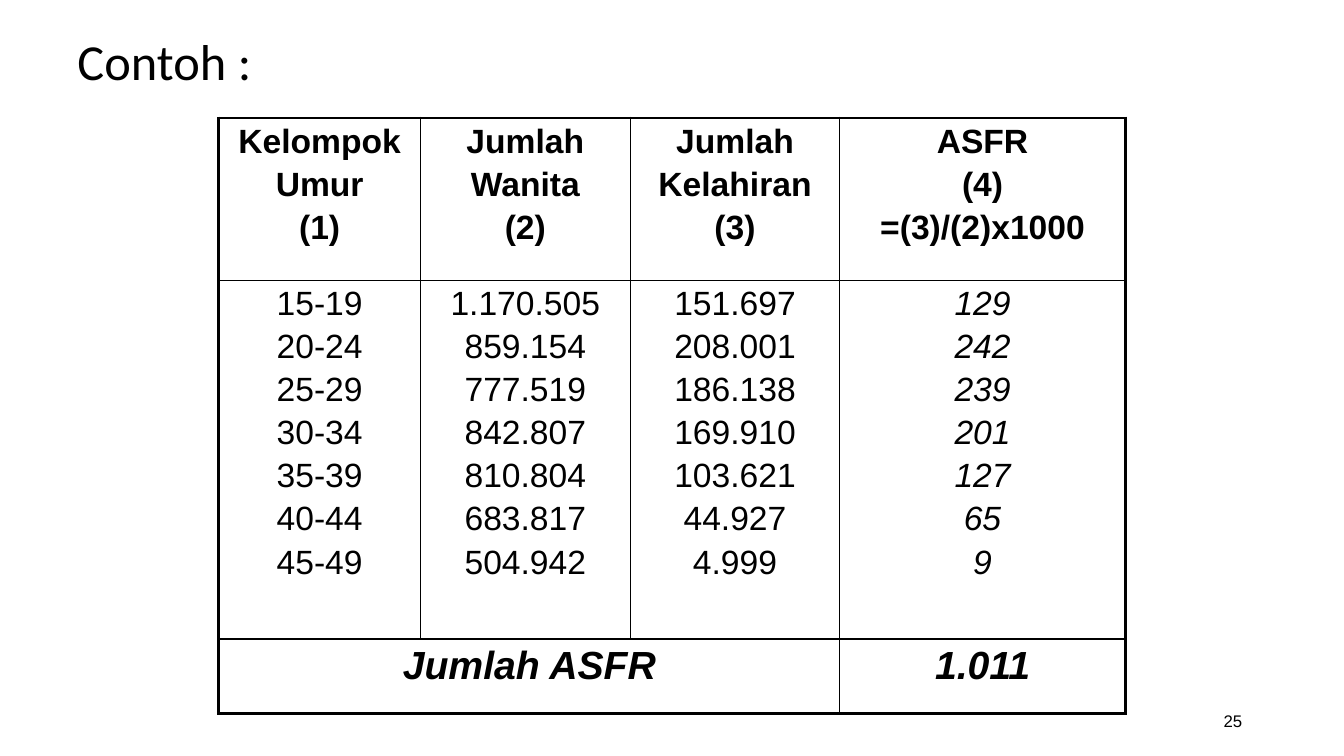
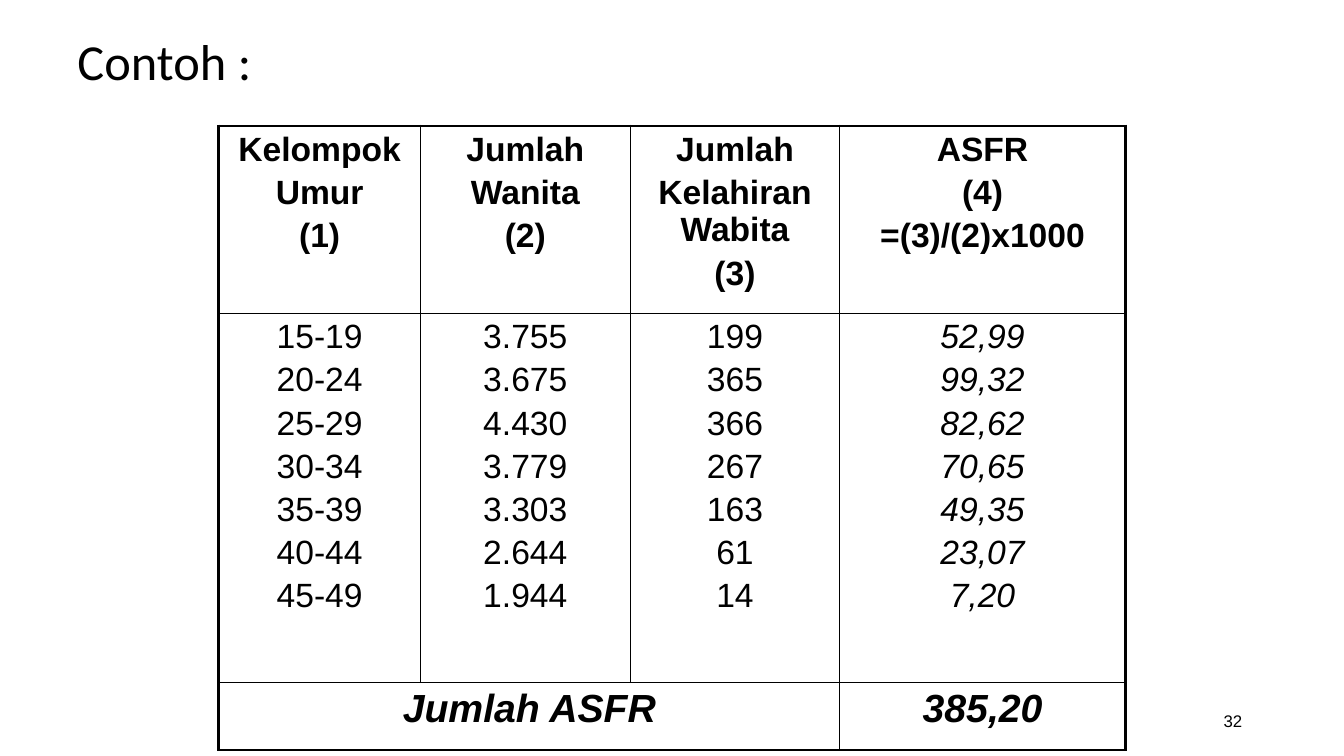
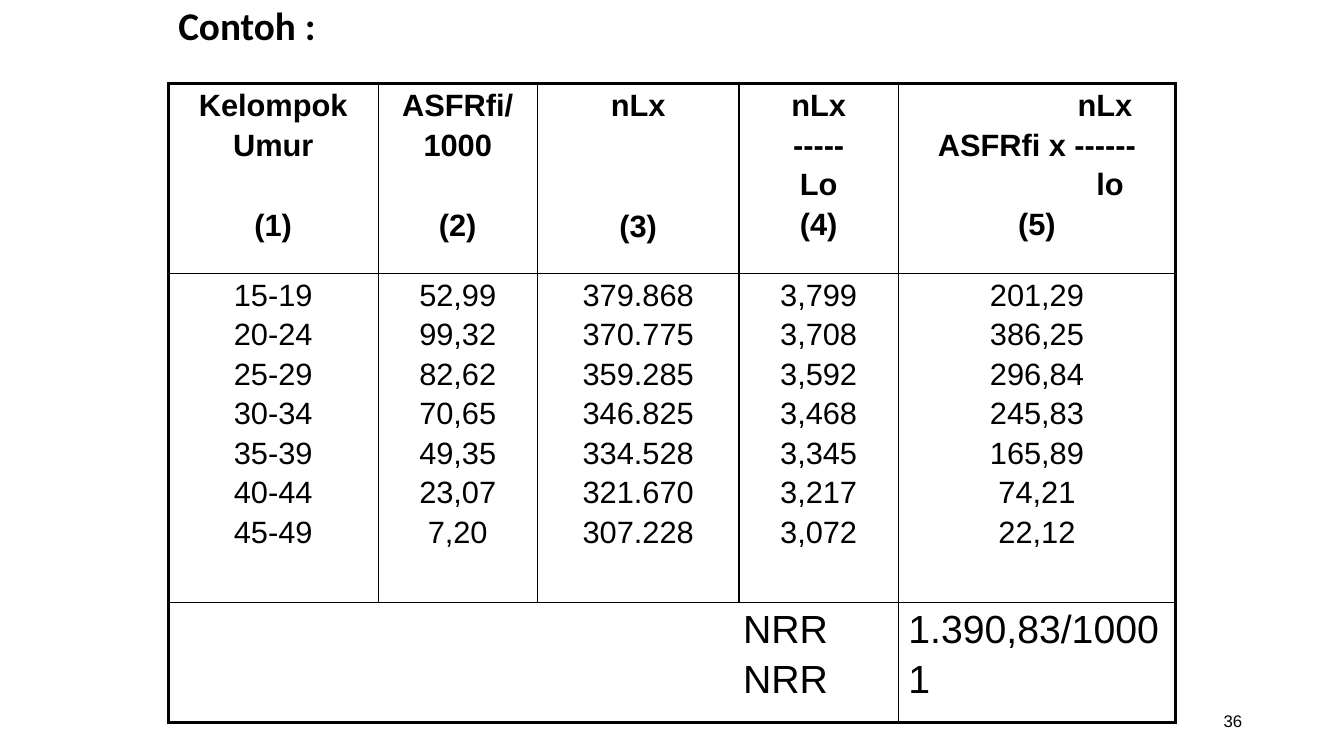
from lxml.etree import SubElement
from pptx import Presentation
from pptx.dml.color import RGBColor
from pptx.enum.text import MSO_ANCHOR, PP_ALIGN
from pptx.oxml.ns import qn
from pptx.util import Inches, Pt

AGES = "15-19 20-24 25-29 30-34 35-39 40-44 45-49"
RATES = "52,99 99,32 82,62 70,65 49,35 23,07 7,20"
INK = "000000"
THIN, THICK = 1, 2.25
GAP = 0.165
LINE = 1.15


def color(code):
    return RGBColor.from_string(code)


class Deck:
    """Holds the shared style and the current slide."""

    def __init__(self):
        self.file = Presentation()
        self.file.slide_width = Inches(13.33)
        self.file.slide_height = Inches(7.5)
        self.slide = None

    def page(self, number):
        self.slide = self.file.slides.add_slide(self.file.slide_layouts[6])
        frame = self.box(9.42, 6.95, 3, 0.4, MSO_ANCHOR.MIDDLE)
        self.label(frame.paragraphs[0], str(number), PP_ALIGN.RIGHT, size=Pt(12))

    def box(self, left, top, width, height, anchor):
        place = [Inches(v) for v in (left, top, width, height)]
        frame = self.slide.shapes.add_textbox(*place).text_frame
        frame.word_wrap = True
        frame.vertical_anchor = anchor
        return frame

    def label(self, para, text, align, **look):
        para.alignment = align
        run = para.add_run()
        run.text = text
        run.font.color.rgb = color(INK)
        for key, value in ({"name": "Arial"} | look).items():
            setattr(run.font, key, value)

    def title(self, text, left=0.67, top=0.3, width=12, height=1.25, size=36, bold=False):
        frame = self.box(left, top, width, height, MSO_ANCHOR.TOP)
        frame.margin_top = Inches(0.07)
        para = frame.paragraphs[0]
        para.line_spacing = 0.9
        self.label(para, text, PP_ALIGN.LEFT, name="Calibri", size=Pt(size), bold=bold)

    def lines(self, cell, texts, size, align=PP_ALIGN.CENTER, shifts=(), **look):
        frame = cell.text_frame
        fresh, skip = True, 0
        for at, text in enumerate(texts):
            if not text:
                skip += 1
                continue
            para = frame.paragraphs[0] if fresh else frame.add_paragraph()
            para.space_before = Pt(round(size * (GAP + skip * (LINE + GAP)), 1))
            if at in dict(shifts):
                para._p.get_or_add_pPr().set("marL", str(Inches(dict(shifts)[at])))
            self.label(para, text, align, size=Pt(size), **look)
            fresh, skip = False, 0

    def edge(self, cell, side, width):
        line = SubElement(cell._tc.get_or_add_tcPr(), qn("a:ln" + side), w=str(Pt(width)))
        fill = SubElement(line, qn("a:solidFill"))
        SubElement(fill, qn("a:srgbClr"), val=INK)

    def table(self, left, top, widths, heights):
        rows, cols = len(heights), len(widths)
        place = [Inches(v) for v in (left, top, sum(widths), sum(heights))]
        grid = self.slide.shapes.add_table(rows, cols, *place).table
        grid.first_row = grid.horz_banding = False
        for col, width in zip(grid.columns, widths):
            col.width = Inches(width)
        for row, height in zip(grid.rows, heights):
            row.height = Inches(height)
        grid.cell(rows - 1, 0).merge(grid.cell(rows - 1, cols - 2))
        for r in range(rows):
            for c in range(cols):
                cell = grid.cell(r, c)
                outer = {"L": c == 0, "R": c == cols - 1, "T": r == 0, "B": r == rows - 1}
                for side, thick in outer.items():
                    if not (cell.is_spanned and side in "LR"):
                        self.edge(cell, side, THICK if thick else THIN)
                cell.fill.background()
        return grid

    def rates(self, number, top, heights, heads, data, total):
        self.page(number)
        self.title("Contoh :")
        grid = self.table(2.17, top, [2, 2.08, 2.08, 2.83], heights)
        for c, (head, body) in enumerate(zip(heads, data)):
            self.lines(grid.cell(0, c), head, 24, bold=True)
            self.lines(grid.cell(1, c), body.split(), 24, italic=c == 3)
        for c, text in ((0, "Jumlah ASFR"), (3, total)):
            self.lines(grid.cell(2, c), [text], 28, bold=True, italic=True)

    def growth(self, number, heads, data, foot):
        self.page(number)
        self.title("Contoh :", 1.67, 0, 9.5, 1, 28, True)
        grid = self.table(1.67, 0.83, [2.08, 1.58, 2, 1.58, 2.75], [1.88, 3.27, 1.19])
        for c, (head, body) in enumerate(zip(heads, data)):
            shifts = {0: 1.35, 2: 1.45} if c == 4 else {}
            self.lines(grid.cell(0, c), head, 22, shifts=shifts, bold=True)
            self.lines(grid.cell(1, c), body.split(), 22)
        for c, texts, shift in ((0, ["NRR", "NRR"], 5.6), (4, foot, 0)):
            self.lines(grid.cell(2, c), texts, 28, PP_ALIGN.LEFT, {0: shift, 1: shift})


def main():
    deck = Deck()
    age = ["Kelompok", "Umur", "(1)"]
    women = ["Jumlah", "Wanita", "(2)"]
    rate = ["ASFR", "(4)", "=(3)/(2)x1000"]
    deck.rates(
        25, 1.17, [1.61, 3.56, 0.74],
        [age, women, ["Jumlah", "Kelahiran", "(3)"], rate],
        [AGES,
         "1.170.505 859.154 777.519 842.807 810.804 683.817 504.942",
         "151.697 208.001 186.138 169.910 103.621 44.927 4.999",
         "129 242 239 201 127 65 9"],
        "1.011")
    deck.rates(
        32, 1.25, [1.86, 3.66, 0.67],
        [age, women, ["Jumlah", "Kelahiran Wabita", "(3)"], rate],
        [AGES,
         "3.755 3.675 4.430 3.779 3.303 2.644 1.944",
         "199 365 366 267 163 61 14",
         RATES],
        "385,20")
    deck.growth(
        36,
        [["Kelompok", "Umur", "", "(1)"],
         ["ASFRfi/", "1000", "", "(2)"],
         ["nLx", "", "", "(3)"],
         ["nLx", "-----", "Lo", "(4)"],
         ["nLx", "ASFRfi x ------", "lo", "(5)"]],
        [AGES, RATES,
         "379.868 370.775 359.285 346.825 334.528 321.670 307.228",
         "3,799 3,708 3,592 3,468 3,345 3,217 3,072",
         "201,29 386,25 296,84 245,83 165,89 74,21 22,12"],
        ["1.390,83/1000", "1"])
    deck.file.save("out.pptx")


if __name__ == "__main__":
    main()
